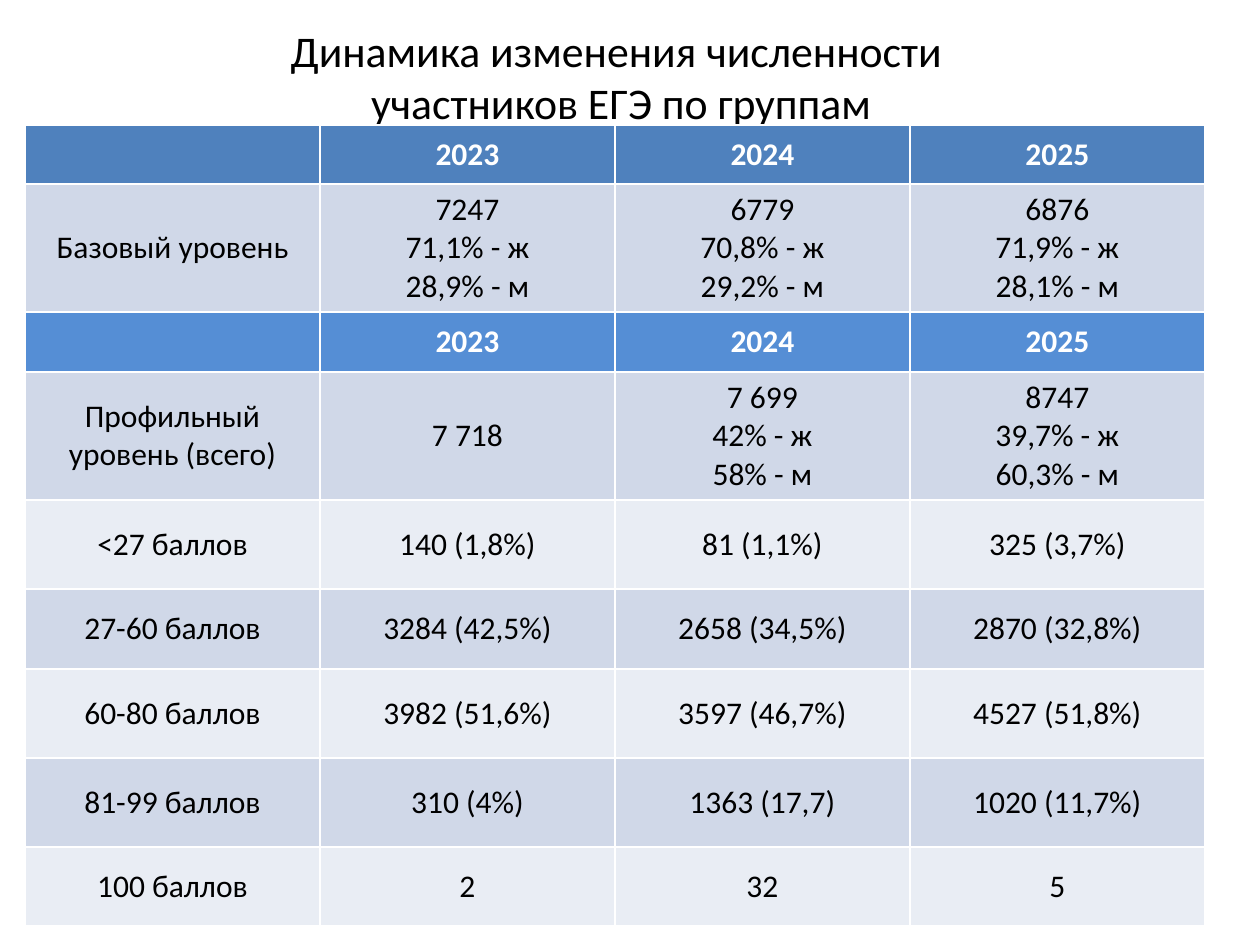
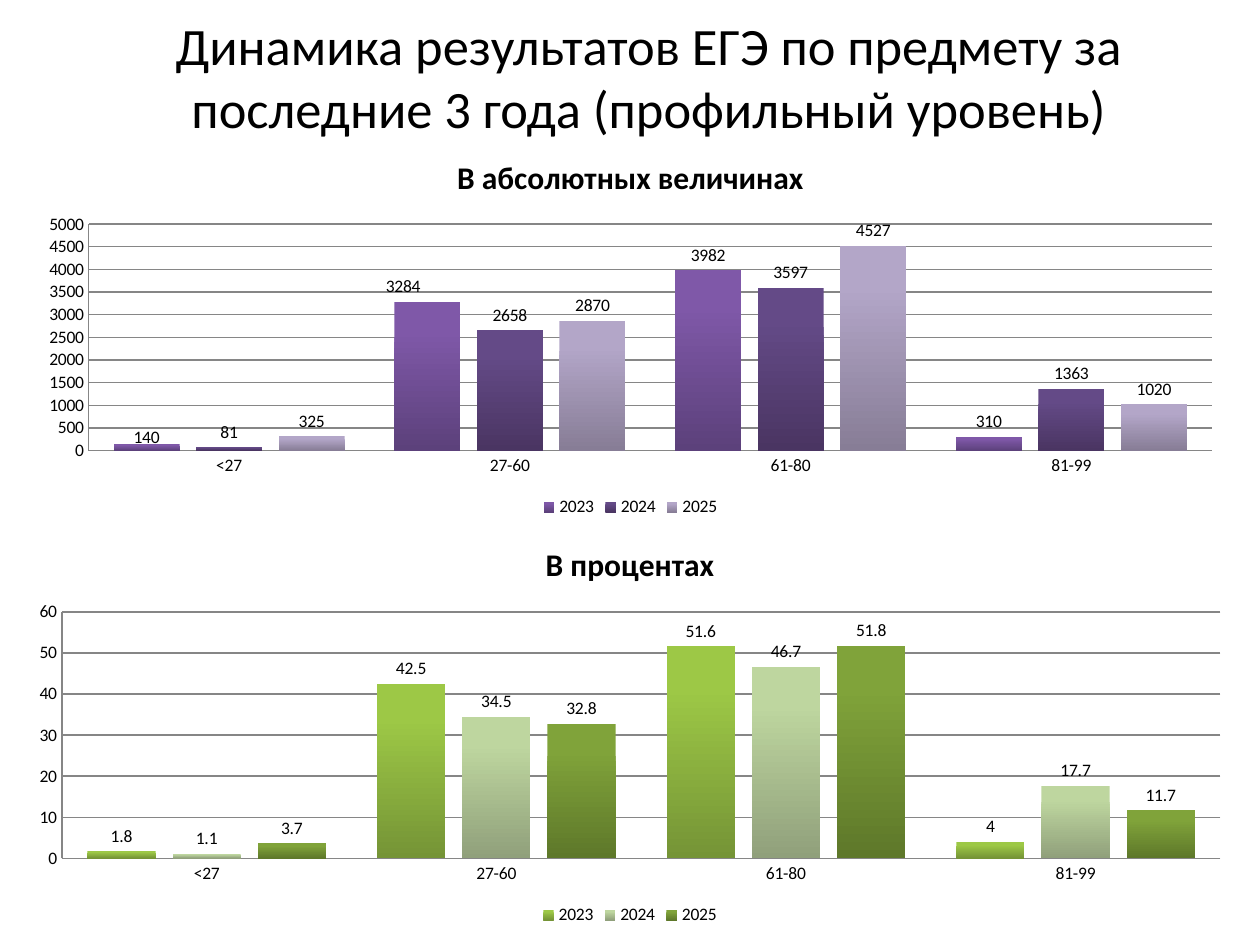
from lxml import etree
from pptx import Presentation
from pptx.chart.data import CategoryChartData
from pptx.dml.color import RGBColor
from pptx.enum.chart import XL_CHART_TYPE, XL_LABEL_POSITION, XL_LEGEND_POSITION, XL_TICK_MARK
from pptx.enum.text import MSO_ANCHOR, MSO_AUTO_SIZE, PP_ALIGN
from pptx.oxml.ns import qn
from pptx.util import Emu, Pt

CLUSTERED = XL_CHART_TYPE.COLUMN_CLUSTERED
OUTSIDE_END = XL_LABEL_POSITION.OUTSIDE_END
LEGEND_BOTTOM = XL_LEGEND_POSITION.BOTTOM
NO_TICKS = XL_TICK_MARK.NONE
MIDDLE = MSO_ANCHOR.MIDDLE
NO_AUTOFIT = MSO_AUTO_SIZE.NONE
CENTER = PP_ALIGN.CENTER

PX_PER_INCH = 126
TITLE_ONLY = 5
FONT = "Calibri"
COLORS = {
    "text": "000000",
    "white": "FFFFFF",
    "basic_header": "4F81BD",
    "profile_header": "558ED5",
    "band_dark": "D0D8E8",
    "band_light": "E9EDF4",
    "grid": "868686",
}
# Top and bottom colour of the columns for each year
PURPLES = [("7F58A8", "5C417B"), ("644A87", "4A3562"), ("B3A6C8", "877D96")]
GREENS = [("9DC846", "759436"), ("BED69F", "90A07B"), ("80A33A", "5E782A")]

YEARS = ["2023", "2024", "2025"]
SCORE_GROUPS = ["<27", "27-60", "61-80", "81-99"]
COUNTS = [[140, 3284, 3982, 310], [81, 2658, 3597, 1363], [325, 2870, 4527, 1020]]
PERCENTS = [[1.8, 42.5, 51.6, 4], [1.1, 34.5, 46.7, 17.7], [3.7, 32.8, 51.8, 11.7]]

# Row height, fill, cell texts
PARTICIPANTS = [
    (59, "basic_header", ["", *YEARS]),
    (128, "band_dark", ["Базовый уровень", "7247\n71,1% - ж\n28,9% - м",
                        "6779\n70,8% - ж\n29,2% - м", "6876\n71,9% - ж\n28,1% - м"]),
    (60, "profile_header", ["", *YEARS]),
    (128, "band_dark", ["Профильный уровень (всего)", "7 718",
                        "7 699\n42% - ж\n58% - м", "8747\n39,7% - ж\n60,3% - м"]),
    (89, "band_light", ["<27 баллов", "140 (1,8%)", "81 (1,1%)", "325 (3,7%)"]),
    (80, "band_dark", ["27-60 баллов", "3284 (42,5%)", "2658 (34,5%)", "2870 (32,8%)"]),
    (89, "band_light", ["60-80 баллов", "3982 (51,6%)", "3597 (46,7%)", "4527 (51,8%)"]),
    (89, "band_dark", ["81-99 баллов", "310 (4%)", "1363 (17,7)", "1020 (11,7%)"]),
    (79, "band_light", ["100 баллов", "2", "32", "5"]),
]


def px(length):
    return Emu(round(length * 914400 / PX_PER_INCH))


def rgb(name):
    return RGBColor.from_string(COLORS.get(name, name))


class Deck:
    def __init__(self):
        self.prs = Presentation()
        self.prs.slide_width, self.prs.slide_height = px(1260), px(945)
        self.slide = None

    def style(self, font, size, color="text", bold=False):
        font.name, font.size, font.bold = FONT, Pt(size), bold
        font.color.rgb = rgb(color)

    def add_text(self, paragraph, text, size, color="text", bold=False):
        paragraph.alignment = CENTER
        for number, line in enumerate(text.split("\n")):
            if number:
                paragraph.add_line_break()
            run = paragraph.add_run()
            run.text = line
            self.style(run.font, size, color, bold)

    def add_slide(self, heading, box, size):
        self.slide = self.prs.slides.add_slide(self.prs.slide_layouts[TITLE_ONLY])
        title = self.slide.shapes.title
        title.left, title.top, title.width, title.height = map(px, box)
        frame = title.text_frame
        frame.word_wrap, frame.auto_size, frame.vertical_anchor = True, NO_AUTOFIT, MIDDLE
        self.add_text(frame.paragraphs[0], heading, size)

    def table(self, rows, left, top, column_width):
        columns = len(rows[0][2])
        height = sum(row[0] for row in rows)
        table = self.slide.shapes.add_table(
            len(rows), columns, px(left), px(top), px(column_width * columns), px(height)).table
        for row, (row_height, fill, texts) in zip(table.rows, rows):
            row.height = px(row_height)
            is_header = fill.endswith("header")
            for cell, text in zip(row.cells, texts):
                cell.fill.solid()
                cell.fill.fore_color.rgb = rgb(fill)
                cell.vertical_anchor = MIDDLE
                frame = cell.text_frame
                for number, line in enumerate(text.split("\n") if text else []):
                    paragraph = frame.add_paragraph() if number else frame.paragraphs[0]
                    self.add_text(paragraph, line, 18, "white" if is_header else "text", is_header)

    def column_chart(self, heading, values, gradients, box, top_value, step):
        data = CategoryChartData()
        data.categories = SCORE_GROUPS
        for year, year_values in zip(YEARS, values):
            data.add_series(year, year_values)
        chart = self.slide.shapes.add_chart(CLUSTERED, *map(px, box), data).chart
        self.style(chart.font, 10)
        self.add_text(chart.chart_title.text_frame.paragraphs[0], heading, 18, bold=True)
        chart.chart_title.include_in_layout = False
        chart.has_legend = True
        chart.legend.position = LEGEND_BOTTOM
        chart.legend.include_in_layout = False

        scale = chart.value_axis
        scale.minimum_scale, scale.maximum_scale, scale.major_unit = 0, top_value, step
        scale.has_major_gridlines = True
        for axis in (scale, chart.category_axis):
            axis.major_tick_mark = axis.minor_tick_mark = NO_TICKS
        for line in (scale.format.line, chart.category_axis.format.line,
                     scale.major_gridlines.format.line):
            line.color.rgb = rgb("grid")
            line.width = Pt(0.75)

        plot = chart.plots[0]
        plot.gap_width, plot.overlap, plot.vary_by_categories = 75, -25, False
        for series, gradient in zip(plot.series, gradients):
            self.fill_columns(series, gradient)
            series.data_labels.show_value = True
            series.data_labels.position = OUTSIDE_END
        return chart

    def fill_columns(self, series, gradient):
        fill = series.format.fill
        fill.gradient()
        fill.gradient_angle = 270
        for stop, color, position in zip(fill.gradient_stops, gradient, (0.2, 1)):
            stop.color.rgb = rgb(color)
            stop.position = position

    def shift_label(self, series, index, dx, dy):
        """Move one value label by fractions of the chart size."""
        series.points[index].data_label.position = OUTSIDE_END
        label = next(item for item in series._element.iter(qn("c:dLbl"))
                     if item.find(qn("c:idx")).get("val") == str(index))
        layout = etree.Element(qn("c:layout"))
        manual = etree.SubElement(layout, qn("c:manualLayout"))
        for axis, shift in (("x", dx), ("y", dy)):
            etree.SubElement(manual, qn(f"c:{axis}")).set("val", str(shift))
        label.insert(1, layout)


def main():
    deck = Deck()
    deck.add_slide("Динамика изменения численности \nучастников ЕГЭ по группам",
                   (54, 16, 1134, 120), 25)
    deck.table(PARTICIPANTS, 25, 125, 295)

    deck.add_slide("Динамика результатов ЕГЭ по предмету за последние 3 года (профильный уровень)",
                   (82, -2, 1134, 157), 30)
    counts = deck.column_chart("В абсолютных величинах", COUNTS, PURPLES,
                               (25, 135, 1211, 387), 5000, 500)
    first_year = counts.plots[0].series[0]
    deck.shift_label(first_year, 0, 0, 0.02)
    deck.shift_label(first_year, 1, -0.02, 0)
    deck.column_chart("В процентах", PERCENTS, GREENS, (15, 522, 1230, 408), 60, 10)
    deck.prs.save("out.pptx")


if __name__ == "__main__":
    main()
